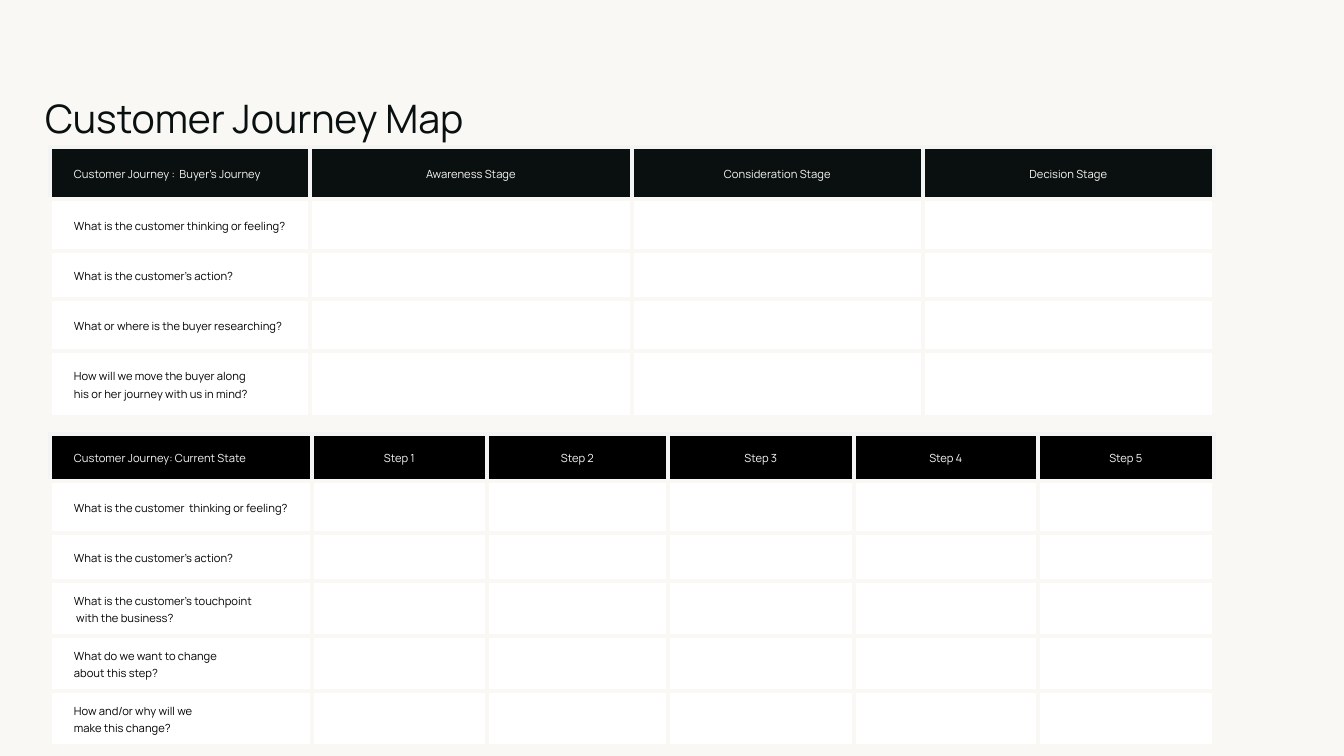
from lxml.etree import SubElement
from pptx import Presentation
from pptx.dml.color import RGBColor
from pptx.enum.shapes import MSO_SHAPE as Shape
from pptx.enum.text import MSO_ANCHOR as Anchor, PP_ALIGN as Align
from pptx.oxml.ns import qn
from pptx.util import Emu, Pt

PX = 914400 / 100.8
FONT = "Manrope"
CREAM = RGBColor(0xF9, 0xF8, 0xF5)
PALE_GREY = RGBColor(0xF4, 0xF4, 0xF4)
INK = RGBColor(0x09, 0x10, 0x0F)
BLACK = RGBColor(0x00, 0x00, 0x00)
WHITE = RGBColor(0xFF, 0xFF, 0xFF)

BUYER_HEADERS = ["Customer Journey :  Buyer’s Journey", "Awareness Stage",
                 "Consideration Stage", "Decision Stage"]
BUYER_QUESTIONS = [
    ["What is the customer thinking or feeling?"],
    ["What is the customer’s action?"],
    ["What or where is the buyer researching?"],
    ["How will we move the buyer along", "his or her journey with us in mind?"],
]
STATE_HEADERS = ["Customer Journey: Current State"] + [f"Step {n}" for n in range(1, 6)]
STATE_QUESTIONS = [
    ["What is the customer  thinking or feeling?"],
    ["What is the customer’s action?"],
    ["What is the customer’s touchpoint", " with the business?"],
    ["What do we want to change", "about this step?"],
    ["How and/or why will we", "make this change?"],
]


def px(length):
    return Emu(round(length * PX))


def add_run(paragraph, text, size, color):
    run = paragraph.add_run()
    run.text = text
    run.font.name = FONT
    run.font.size = Pt(size)
    run.font.color.rgb = color


def set_borders(cell, side_color, bottom_color, top_color):
    properties = cell._tc.get_or_add_tcPr()
    colors = {"a:lnL": side_color, "a:lnR": side_color,
              "a:lnT": top_color, "a:lnB": bottom_color}
    # Border lines precede the fill in the cell properties
    for position, (tag, color) in enumerate(colors.items()):
        line = SubElement(properties, qn(tag), w=str(Pt(3)))
        solid = SubElement(line, qn("a:solidFill"))
        SubElement(solid, qn("a:srgbClr"), val=str(color))
        properties.insert(position, line)


def write_cell(cell, lines, color, align, left_inset, inset):
    cell.vertical_anchor = Anchor.MIDDLE
    cell.margin_left = px(left_inset)
    cell.margin_right = cell.margin_top = cell.margin_bottom = px(inset)
    for index, text in enumerate(lines):
        frame = cell.text_frame
        paragraph = frame.add_paragraph() if index else frame.paragraphs[0]
        paragraph.alignment = align
        paragraph.line_spacing = 1.15
        add_run(paragraph, text, 8, color)


def add_title(slide, left, top, width, height):
    title = slide.shapes.add_shape(Shape.RECTANGLE, px(left), px(top), px(width), px(height))
    title.shadow.inherit = False
    title.fill.solid()
    title.fill.fore_color.rgb = CREAM
    title.line.fill.background()
    frame = title.text_frame
    frame.word_wrap = True
    frame.vertical_anchor = Anchor.MIDDLE
    frame.margin_left = frame.margin_right = frame.margin_top = frame.margin_bottom = 0
    paragraph = frame.paragraphs[0]
    paragraph.alignment = Align.LEFT
    paragraph.space_after = Pt(10)
    add_run(paragraph, "Customer Journey Map", 28, INK)


def add_journey_table(slide, left, top, widths, heights, headers, questions,
                      header_fill, inset):
    frame = slide.shapes.add_table(len(heights), len(widths), px(left), px(top),
                                   px(sum(widths)), px(sum(heights)))
    table = frame.table
    table.horz_banding = False
    for column, width in zip(table.columns, widths):
        column.width = px(width)
    for row, height in zip(table.rows, heights):
        row.height = px(height)

    # Header row on dark, blank answer cells on white
    for row_index in range(len(heights)):
        is_header = row_index == 0
        for column_index in range(len(widths)):
            cell = table.cell(row_index, column_index)
            cell.fill.solid()
            cell.fill.fore_color.rgb = header_fill if is_header else WHITE
            edge = PALE_GREY if is_header else CREAM
            set_borders(cell, edge, CREAM, edge)

    # Column headings, then the questions down the first column
    for column_index, text in enumerate(headers):
        first = column_index == 0
        write_cell(table.cell(0, column_index), [text], CREAM,
                   Align.LEFT if first else Align.CENTER, 24 if first else inset, inset)
    for row_index, lines in enumerate(questions, start=1):
        write_cell(table.cell(row_index, 0), lines, BLACK, Align.LEFT, 24, inset)


def build_journey_slide(presentation):
    slide = presentation.slides.add_slide(presentation.slide_layouts[6])
    slide.background.fill.solid()
    slide.background.fill.fore_color.rgb = CREAM
    add_journey_table(slide, 50, 147, [260, 322, 291, 291], [52, 52, 48, 52, 66],
                      BUYER_HEADERS, BUYER_QUESTIONS, INK, 8)
    add_journey_table(slide, 50, 434, [262, 175, 181, 186, 184, 176],
                      [47, 52, 48, 55, 55, 55],
                      STATE_HEADERS, STATE_QUESTIONS, BLACK, 10)
    add_title(slide, 45, 92, 930, 51)


def main():
    presentation = Presentation()
    presentation.slide_width = px(1344)
    presentation.slide_height = px(756)
    build_journey_slide(presentation)
    presentation.save("out.pptx")


if __name__ == "__main__":
    main()
